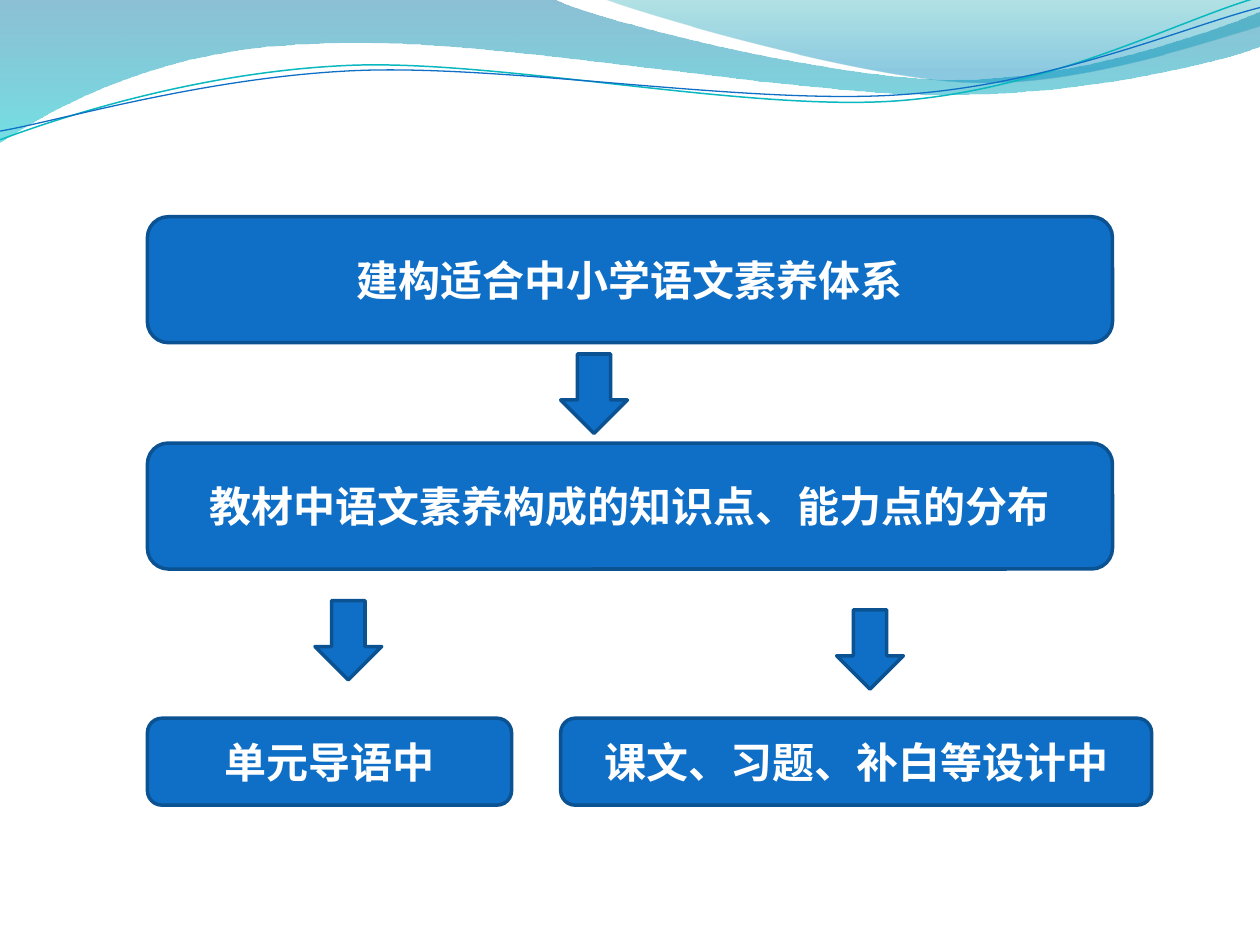
from dataclasses import dataclass

from lxml.etree import SubElement
from pptx import Presentation
from pptx.dml.color import RGBColor
from pptx.enum.shapes import MSO_SHAPE as Preset
from pptx.enum.text import MSO_ANCHOR as Anchor, PP_ALIGN as Align
from pptx.oxml.ns import qn
from pptx.util import Pt

FONT = "Noto Sans CJK SC"
COLORS = {
    "box": "0F6FC6", "border": "0B5292", "text": "FFFFFF",
    "wave_top": "0074A1", "wave_bottom": "00C6CF",
    "corner_top": "00A1A9", "corner_bottom": "008BBF",
    "teal_line": "0AB8BF", "blue_line": "0F6FC6",
}
ARROW_SIZE = (38.16, 45.36)


@dataclass
class Box:
    text: str
    left: float
    top: float
    width: float
    height: float


@dataclass
class Stop:
    position: float
    color: str
    opacity: int


@dataclass
class Wave:
    # A segment of one point is a straight line, of three points a cubic curve
    start: tuple
    segments: list
    stops: tuple = ()
    line_color: str = ""
    line_width: float = 0


WAVES = [
    Wave((-0.5, 0), [
        [(317, -0.5)],
        [(343, 12), (478, 45.2), (546, 45.2)],
        [(614, 45.2), (690, 18.7), (720, 6.5)],
        [(721, 26)],
        [(708, 31.7), (626, 54.7), (537, 54)],
        [(447, 54), (275, 20), (185, 24.5)],
        [(93, 26), (33, 60), (-0.5, 81.4)],
        [(-0.5, 0)],
    ], stops=(Stop(0, "wave_top", 45), Stop(1, "wave_bottom", 55))),
    Wave((345, -0.5), [
        [(366, 8), (491, 44.6), (554, 47)],
        [(616, 49.7), (692, 23), (720, 15)],
        [(720, -0.5)],
        [(345, -0.5)],
    ], stops=(Stop(0, "corner_top", 30), Stop(0.8, "corner_bottom", 45))),
    Wave((0, 79.9), [
        [(34.6, 67), (113.8, 41), (199.4, 37.4)],
        [(284.4, 33.8), (427, 64.1), (513.4, 57.6)],
        [(599.8, 51.1), (675.4, 10.8), (718.6, -1.4)],
    ], line_color="teal_line", line_width=0.85),
    Wave((0, 74.9), [
        [(33.8, 69.1), (118.1, 43.9), (203.8, 40.3)],
        [(290.2, 36.7), (429.8, 60.5), (516.2, 54)],
        [(601.9, 48.2), (677.5, 15.1), (720, 4.3)],
    ], line_color="blue_line", line_width=0.75),
]

BOXES = [
    Box("单元导语中", 84.24, 410.4, 208.08, 49.68),
    Box("课文、习题、补白等设计中", 320.4, 410.4, 337.68, 49.68),
    Box("教材中语文素养构成的知识点、能力点的分布", 84.24, 253.2, 551.52, 72),
    Box("建构适合中小学语文素养体系", 84.24, 123.84, 551.52, 72),
]
ARROWS = [(180, 343.2), (478.08, 348.48), (320.4, 202.32)]


def rgb(key: str) -> RGBColor:
    return RGBColor.from_string(COLORS[key])


def bend_curves(outline, segments: list) -> None:
    """Join each run of three lines that stands for a curve into one curve."""
    lines = iter(list(outline._element.iter(qn("a:lnTo"))))
    for segment in segments:
        first, *others = [next(lines) for _ in segment]
        if others:
            first.tag = qn("a:cubicBezTo")
            for line in others:
                first.append(line[0])
                line.getparent().remove(line)


def draw_wave(slide, wave: Wave) -> None:
    points = [wave.start] + [point for segment in wave.segments for point in segment]
    start, *rest = [(Pt(x), Pt(y)) for x, y in points]
    builder = slide.shapes.build_freeform(*start)
    builder.add_line_segments(rest, close=bool(wave.stops))
    ribbon = builder.convert_to_shape()
    bend_curves(ribbon, wave.segments)
    ribbon.shadow.inherit = False
    if not wave.stops:
        ribbon.fill.background()
        ribbon.line.color.rgb = rgb(wave.line_color)
        ribbon.line.width = Pt(wave.line_width)
        return
    ribbon.line.fill.background()
    ribbon.fill.gradient()
    ribbon.fill.gradient_angle = 270
    for target, stop in zip(ribbon.fill.gradient_stops, wave.stops):
        target.position = stop.position
        target.color.rgb = rgb(stop.color)
    for color, stop in zip(ribbon._element.spPr.iter(qn("a:srgbClr")), wave.stops):
        SubElement(color, qn("a:alpha"), val=str(stop.opacity * 1000))


def draw_shape(slide, preset: Preset, left: float, top: float, width: float, height: float):
    shape = slide.shapes.add_shape(preset, Pt(left), Pt(top), Pt(width), Pt(height))
    shape.shadow.inherit = False
    shape.fill.solid()
    shape.fill.fore_color.rgb = rgb("box")
    shape.line.color.rgb = rgb("border")
    shape.line.width = Pt(2)
    return shape


def draw_box(slide, box: Box) -> None:
    shape = draw_shape(slide, Preset.ROUNDED_RECTANGLE, box.left, box.top, box.width, box.height)
    frame = shape.text_frame
    frame.word_wrap = True
    frame.vertical_anchor = Anchor.MIDDLE
    paragraph = frame.paragraphs[0]
    paragraph.text = box.text
    paragraph.alignment = Align.CENTER
    font = paragraph.font
    font.name, font.size, font.bold = FONT, Pt(24), True
    font.color.rgb = rgb("text")
    # East Asian typeface
    SubElement(paragraph._p.pPr.find(qn("a:defRPr")), qn("a:ea"), typeface=FONT)


def main() -> None:
    deck = Presentation()
    deck.slide_width, deck.slide_height = Pt(720), Pt(540)
    slide = deck.slides.add_slide(deck.slide_layouts[6])

    # Decorative waves along the top
    for wave in WAVES:
        draw_wave(slide, wave)

    # Flow from the system down to its places in the textbook
    for box in BOXES:
        draw_box(slide, box)
    for left, top in ARROWS:
        draw_shape(slide, Preset.DOWN_ARROW, left, top, *ARROW_SIZE)

    deck.save("out.pptx")


if __name__ == "__main__":
    main()
